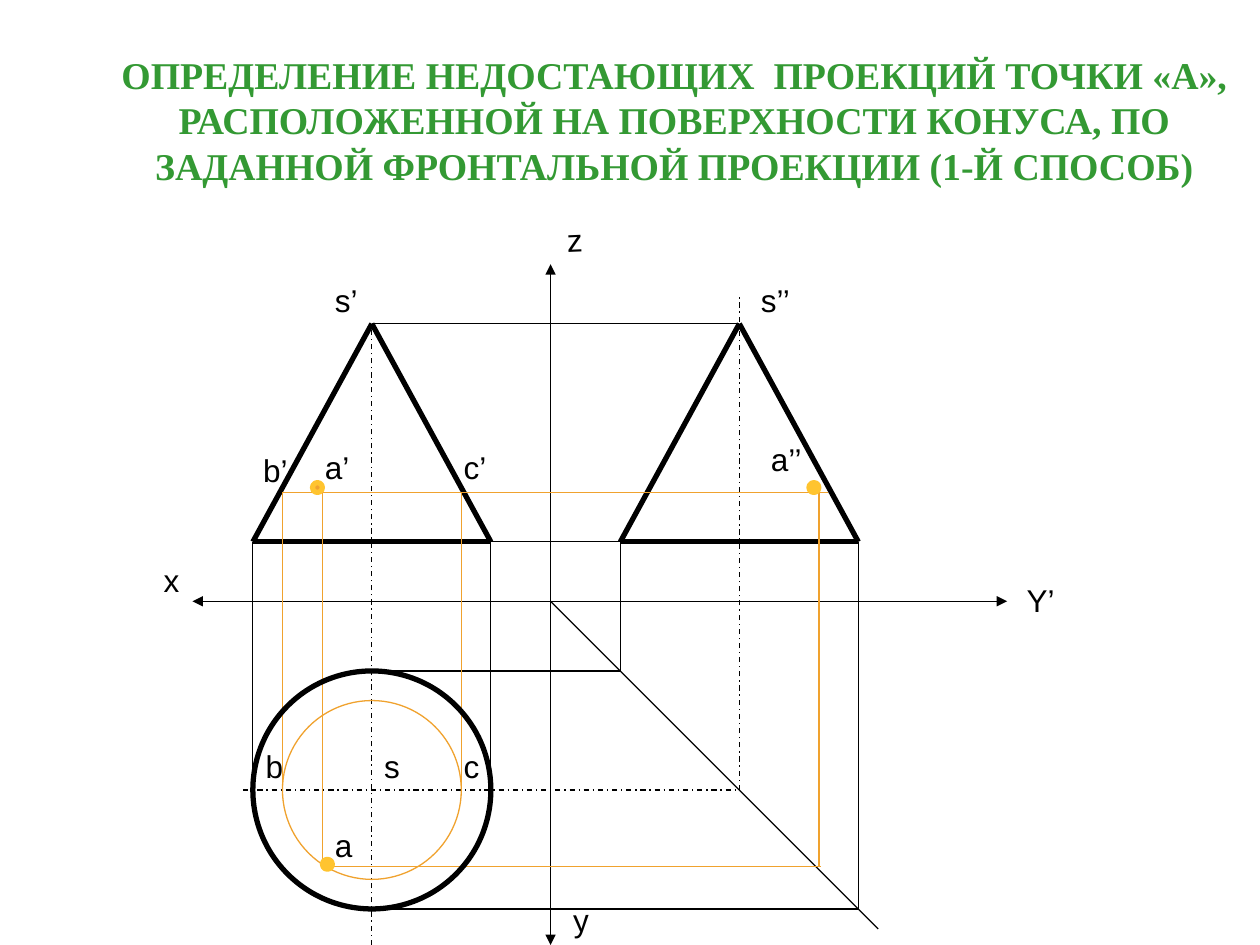
from lxml import etree
from pptx import Presentation
from pptx.dml.color import RGBColor
from pptx.enum import dml, shapes, text
from pptx.oxml import ns
from pptx.util import Pt

THEME = {
    "title": {"name": "Times New Roman", "size": Pt(21.6), "bold": True, "color": "339933"},
    "label": {"name": "Arial", "size": Pt(18), "bold": False, "color": "000000"},
    "ink": "000000", "section": "F0A22E", "point": "FFC42F",
    "thin": 0.75, "thick": 3,
}

presentation = Presentation()
presentation.slide_width, presentation.slide_height = Pt(720), Pt(540)
slide = presentation.slides.add_slide(presentation.slide_layouts[0])
subtitle = slide.placeholders[1].element
subtitle.getparent().remove(subtitle)


def write(frame, words, style):
    frame.text = words
    font = frame.paragraphs[0].runs[0].font
    for name, value in style.items():
        if name == "color":
            font.color.rgb = RGBColor.from_string(value)
        else:
            setattr(font, name, value)


def draw_line(start, end, color=THEME["ink"], width=THEME["thin"], dashed=False, arrows=False):
    line = slide.shapes.add_connector(
        shapes.MSO_CONNECTOR.STRAIGHT, *(Pt(value) for value in (*start, *end)))
    line.line.color.rgb = RGBColor.from_string(color)
    line.line.width = Pt(width)
    if dashed:
        line.line.dash_style = dml.MSO_LINE.DASH_DOT
    properties = line._element.spPr
    if arrows:
        for end_name in ("a:headEnd", "a:tailEnd"):
            etree.SubElement(properties.find(ns.qn("a:ln")), ns.qn(end_name), type="triangle")
    etree.SubElement(properties, ns.qn("a:effectLst"))


title = slide.shapes.title
title.left, title.top, title.width, title.height = Pt(51), Pt(43.2), Pt(669), Pt(50.4)
write(title.text_frame, "ОПРЕДЕЛЕНИЕ НЕДОСТАЮЩИХ  ПРОЕКЦИЙ ТОЧКИ «А», РАСПОЛОЖЕННОЙ "
      "НА ПОВЕРХНОСТИ КОНУСА, ПО ЗАДАННОЙ ФРОНТАЛЬНОЙ ПРОЕКЦИИ (1-Й СПОСОБ)", THEME["title"])
title.text_frame.auto_size = text.MSO_AUTO_SIZE.NONE
title.text_frame.word_wrap = True
title.text_frame.vertical_anchor = text.MSO_ANCHOR.MIDDLE
title.text_frame.paragraphs[0].alignment = text.PP_ALIGN.CENTER

# Cone geometry: front view, top view and side view share these values
origin_x, origin_y = 314.6, 343.6
front_x, side_x, plan_y = 212.5, 422.5, 451.4
apex_y, base_y, section_y = 185, 309.6, 281.4
radius, section_radius = 68, 51.1
front_left, front_right = front_x - radius, front_x + radius
side_left, side_right = side_x - radius, side_x + radius
plan_top, plan_bottom = plan_y - radius, plan_y + radius
section_left, section_right = front_x - section_radius, front_x + section_radius
point_x, point_y, point_side_x = 184.3, 495.2, 468

# Coordinate axes and the 45° line
draw_line((110, origin_y), (575.5, origin_y), arrows=True)
draw_line((origin_x, 540), (origin_x, 151), arrows=True)
draw_line((origin_x, origin_y), (origin_x + 187.2, origin_y + 187.2))

# Centre lines
for start, end in [((139, plan_y), (side_x, plan_y)),
                   ((front_x, 540), (front_x, 188)),
                   ((side_x, plan_y), (side_x, 168))]:
    draw_line(start, end, dashed=True)

# Projection lines between the views
for start, end in [((front_left, base_y), (front_left, plan_y)),
                   ((front_right, base_y), (front_right, plan_y)),
                   ((front_x, plan_top), (side_left, plan_top)),
                   ((side_left, plan_top), (side_left, base_y)),
                   ((front_x, plan_bottom), (side_right, plan_bottom)),
                   ((side_right, plan_bottom), (side_right, base_y)),
                   ((front_x, apex_y), (side_x, apex_y)),
                   ((front_right, base_y), (side_left, base_y))]:
    draw_line(start, end)

# Cone outlines
for center_x in (front_x, side_x):
    left, right, apex = (center_x - radius, base_y), (center_x + radius, base_y), (center_x, apex_y)
    for start, end in [(left, right), (left, apex), (right, apex)]:
        draw_line(start, end, width=THEME["thick"])

# Section through the point
for start, end in [((section_left, section_y), (473, section_y)),
                   ((section_left, section_y), (section_left, plan_y)),
                   ((section_right, section_y), (section_right, plan_y)),
                   ((point_x, section_y), (point_x, point_y)),
                   ((point_x, point_y), (point_side_x + 1.2, point_y)),
                   ((point_side_x, point_y), (point_side_x, section_y))]:
    draw_line(start, end, THEME["section"])

# Base circle, section circle and the three projections of the point
ellipse, dot = shapes.MSO_SHAPE.OVAL, shapes.MSO_SHAPE.FLOWCHART_CONNECTOR
for kind, x, y, size, fill, color, width in [
        (ellipse, front_x, plan_y, radius, None, THEME["ink"], THEME["thick"]),
        (ellipse, front_x, plan_y, section_radius, None, THEME["section"], THEME["thin"]),
        (dot, 187.1, 493.9, 2.8, THEME["point"], THEME["point"], THEME["thick"]),
        (dot, 465.1, 278.6, 2.8, THEME["point"], THEME["point"], THEME["thick"]),
        (dot, 181.4, 278.6, 2.8, THEME["section"], THEME["point"], THEME["thick"])]:
    circle = slide.shapes.add_shape(kind, Pt(x - size), Pt(y - size), Pt(2 * size), Pt(2 * size))
    circle.shadow.inherit = False
    if fill:
        circle.fill.solid()
        circle.fill.fore_color.rgb = RGBColor.from_string(fill)
    else:
        circle.fill.background()
    circle.line.color.rgb = RGBColor.from_string(color)
    circle.line.width = Pt(width)

for words, x, y, width, rotation in [
        ("х", 86.4, 316.8, 23.8, 0), ("z", 316.8, 122.4, 23.8, 357.5),
        ("y", 320.4, 511.2, 23.8, 358), ("Y’", 579.6, 328.3, 30.2, 0),
        ("b’", 143.3, 254.2, 28.8, 0), ("b", 144.7, 423.4, 24.5, 0),
        ("c’", 257.8, 252.7, 27.4, 0), ("c", 257.8, 423.4, 23.8, 0),
        ("a’", 178.6, 252.7, 28.8, 0), ("a", 184.3, 468.7, 24.5, 0),
        ("s", 212.4, 423.4, 23.8, 0), ("s’", 184.3, 157, 27.4, 0),
        ("s’’", 427.7, 157, 31.7, 0), ("a’’", 433.4, 247.7, 32.4, 0)]:
    label = slide.shapes.add_textbox(Pt(x), Pt(y), Pt(width), Pt(28.8))
    label.rotation = rotation
    write(label.text_frame, words, THEME["label"])
    label.text_frame.word_wrap = False
    label.text_frame.auto_size = text.MSO_AUTO_SIZE.SHAPE_TO_FIT_TEXT

presentation.save("out.pptx")
